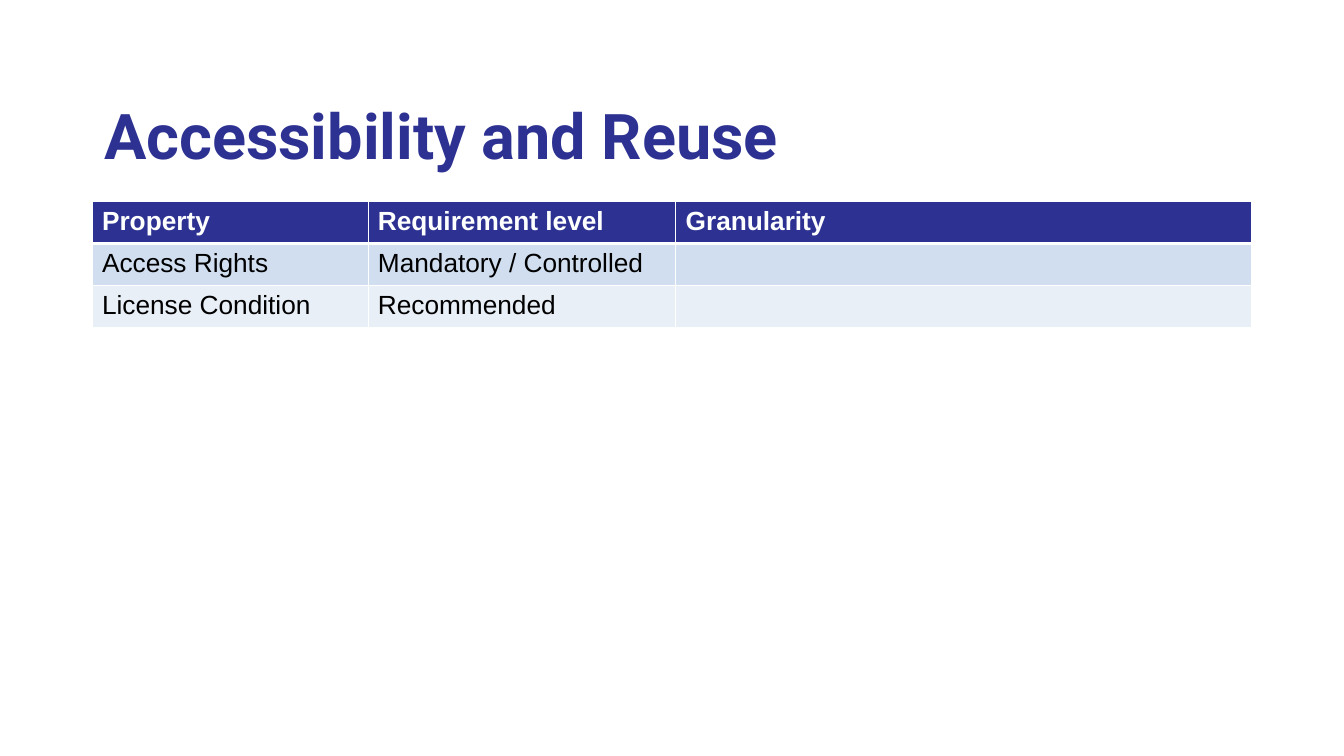
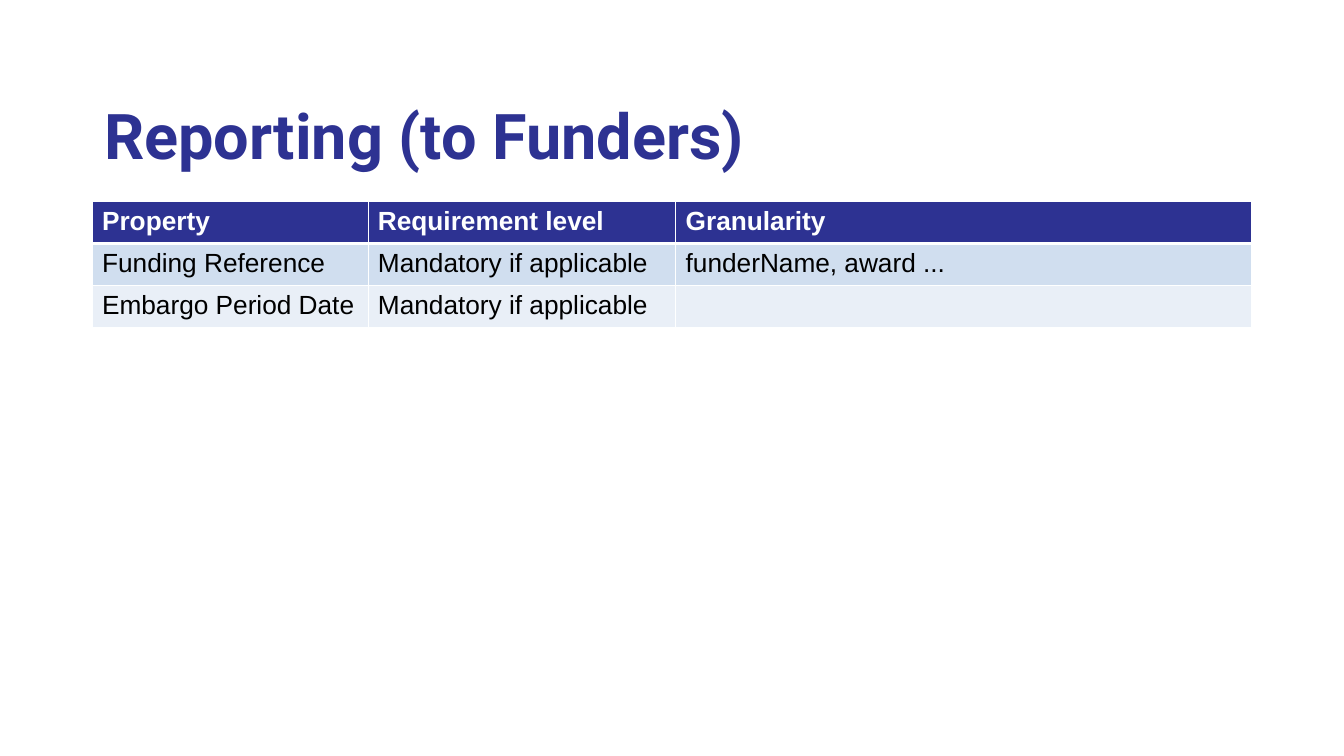
"""Build two slides listing metadata properties with their requirement levels."""
from lxml import etree
from pptx import Presentation
from pptx import util as u
from pptx.dml.color import RGBColor
from pptx.enum import text
from pptx.oxml import ns

COLORS = {
    "navy": "2D3292",
    "white": "FEFFFF",
    "black": "000000",
    "band_dark": "D0DEEF",
    "band_light": "E9EFF7",
}
ROW_FILLS = ["navy", "band_dark", "band_light"]
HEADER = ["Property", "Requirement level", "Granularity"]
COLUMN_WIDTHS = [9.27, 10.34, 19.35]
ROW_HEIGHT = 1.37

SLIDES = [
    ("Accessibility and Reuse", [
        ["Access Rights", "Mandatory / Controlled", ""],
        ["License Condition", "Recommended", ""],
    ]),
    ("Reporting (to Funders)", [
        ["Funding Reference", "Mandatory if applicable", "funderName, award ..."],
        ["Embargo Period Date", "Mandatory if applicable", ""],
    ]),
]


def style_text(frame, font_name, size, color, bold):
    for para in frame.paragraphs:
        for span in para.runs:
            span.font.name = font_name
            span.font.size = u.Pt(size)
            span.font.bold = bold
            span.font.color.rgb = RGBColor.from_string(COLORS[color])


def add_border(cell, side, points):
    properties = cell._tc.get_or_add_tcPr()
    line = etree.SubElement(properties, ns.qn(f"a:ln{side}"), w=str(u.Pt(points)))
    fill = etree.SubElement(line, ns.qn("a:solidFill"))
    etree.SubElement(fill, ns.qn("a:srgbClr"), val=COLORS["white"])


deck = Presentation()
deck.slide_width = u.Cm(45.16)
deck.slide_height = u.Cm(25.4)

for title, body in SLIDES:
    page = deck.slides.add_slide(deck.slide_layouts[6])

    box = page.shapes.add_textbox(u.Cm(3.5), u.Cm(1.68), u.Cm(38.5), u.Cm(5.66))
    frame = box.text_frame
    frame.word_wrap = True
    frame.vertical_anchor = text.MSO_ANCHOR.MIDDLE
    frame.margin_left = frame.margin_right = 0
    frame.margin_top = frame.margin_bottom = 0
    frame.text = title
    style_text(frame, "Roboto", 60, "navy", True)

    rows = [HEADER] + body
    table = page.shapes.add_table(
        len(rows), len(HEADER), u.Cm(3.1), u.Cm(6.76),
        u.Cm(sum(COLUMN_WIDTHS)), u.Cm(ROW_HEIGHT * len(rows))).table
    for column, width in zip(table.columns, COLUMN_WIDTHS):
        column.width = u.Cm(width)

    for r, (row, fill_name) in enumerate(zip(rows, ROW_FILLS)):
        table.rows[r].height = u.Cm(ROW_HEIGHT)
        is_header = r == 0
        for c, words in enumerate(row):
            cell = table.cell(r, c)
            cell.margin_left = cell.margin_right = u.Cm(0.33)
            cell.margin_top = cell.margin_bottom = u.Cm(0.18)
            add_border(cell, "L", 1)
            add_border(cell, "R", 1)
            add_border(cell, "T", 3 if r == 1 else 1)
            add_border(cell, "B", 3 if is_header else 1)
            cell.fill.solid()
            cell.fill.fore_color.rgb = RGBColor.from_string(COLORS[fill_name])
            if words:
                cell.text_frame.text = words
                style_text(cell.text_frame, "Arial", 25,
                           "white" if is_header else "black", is_header)

deck.save("out.pptx")
